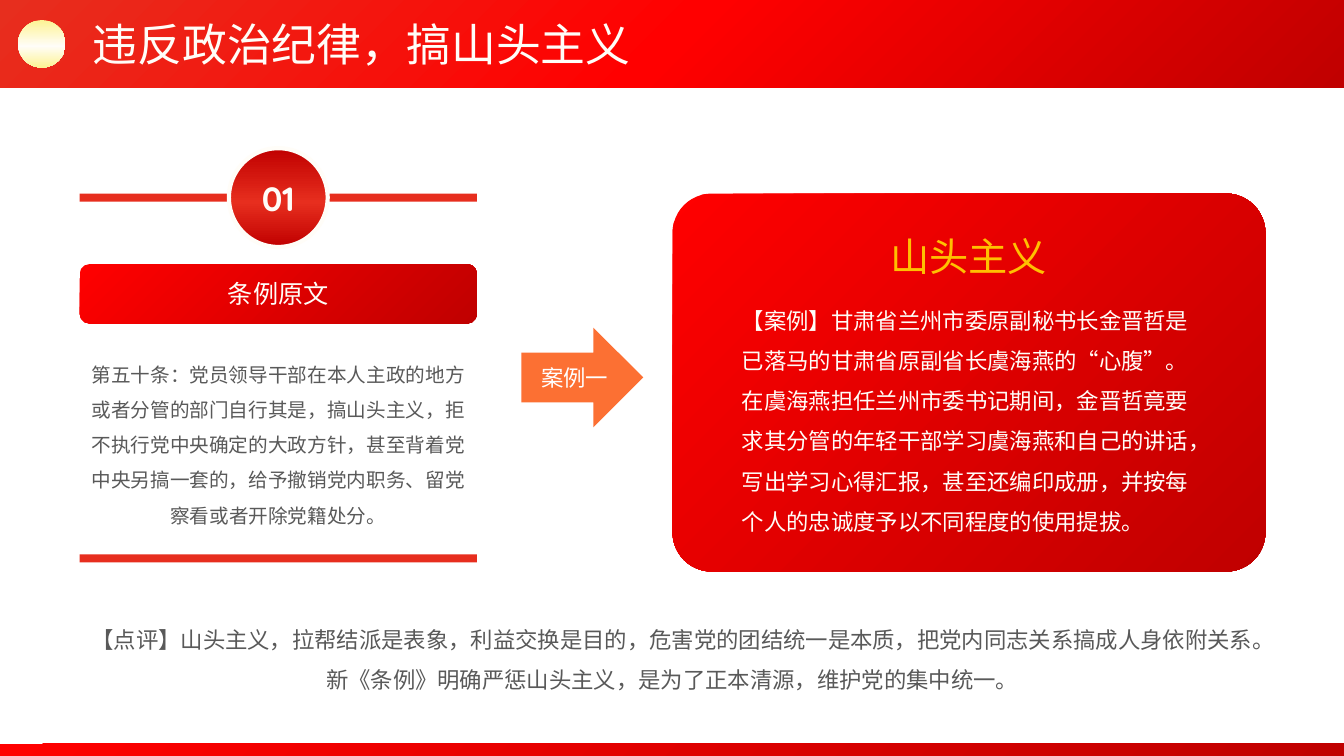
"""Build the slide on factional conduct: rule, case and comment."""
from copy import deepcopy
from pptx import Presentation
from pptx.dml.color import RGBColor
from pptx.enum.shapes import MSO_SHAPE
from pptx.enum.text import MSO_ANCHOR, MSO_AUTO_SIZE, PP_ALIGN
from pptx.oxml.ns import qn
from pptx.util import Inches, Pt

RECT, ROUND, OVAL = MSO_SHAPE.RECTANGLE, MSO_SHAPE.ROUNDED_RECTANGLE, MSO_SHAPE.OVAL
ARROW = MSO_SHAPE.RIGHT_ARROW
LEFT, MID, RIGHT = PP_ALIGN.LEFT, PP_ALIGN.CENTER, PP_ALIGN.RIGHT
CENTER, TOP = MSO_ANCHOR.MIDDLE, MSO_ANCHOR.TOP
GROW, FIXED = MSO_AUTO_SIZE.SHAPE_TO_FIT_TEXT, MSO_AUTO_SIZE.NONE

THEME = {
    "red": "E72E1E", "orange": "FC7033", "cream": "FFFDF8", "white": "FFFFFF",
    "gray": "595959", "gold": "FFC000",
    "deep": (45, (0, "FF0000"), (1, "C00000")),
    "head": (45, (0, "E72E1E"), (0.5, "FF0000"), (1, "C00000")),
    "disc": (90, (0, "C00000"), (0.55, "E72E1E"), (1, "C00000")),
    "glow": (90, (0, "FDF394"), (0.55, "FFFDF8"), (1, "FDF394")),
    "han": "Noto Sans CJK SC", "num": "Quicksand",
    "title": 32, "name": 28, "mark": 24, "label": 18, "body": 16, "rule": 14,
}

WIDE, HIGH = 13.33, 7.5
EDGE, COL, END = 0.79, 3.94, 12.55
BAR, DISC, LINE = 0.08, 0.98, 1.92
CARD = 6.67

deck = Presentation()
deck.slide_width, deck.slide_height = Inches(WIDE), Inches(HIGH)
slide = deck.slides.add_slide(deck.slide_layouts[6])


def draw(kind, *at, fill=None):
    """Add a shape, or a text box when kind is None."""
    at = [Inches(n) for n in at]
    if kind is None:
        return slide.shapes.add_textbox(*at)
    shape = slide.shapes.add_shape(kind, *at)
    shape.shadow.inherit = False
    shape.line.fill.background()
    paint = THEME[fill]
    if isinstance(paint, str):
        shape.fill.solid()
        shape.fill.fore_color.rgb = RGBColor.from_string(paint)
        return shape
    angle, *stops = paint
    shape.fill.gradient()
    shape.fill.gradient_angle = 360 - angle
    ramp = next(shape._element.spPr.iter(qn("a:gsLst")))
    for _ in stops[2:]:
        ramp.append(deepcopy(ramp[-1]))
    for stop, (spot, tone) in zip(shape.fill.gradient_stops, stops):
        stop.position = spot
        stop.color.rgb = RGBColor.from_string(tone)
    return shape


def write(shape, text, size="body", color="cream", face="han", align=MID,
          anchor=CENTER, space=None, bold=False, wrap=True, fit=FIXED):
    """Put one formatted paragraph into a shape."""
    frame = shape.text_frame
    frame.word_wrap, frame.auto_size = wrap, fit
    frame.vertical_anchor = anchor
    para = frame.paragraphs[0]
    para.alignment, para.line_spacing = align, space
    run = para.add_run()
    run.text = text
    font = run.font
    font.size, font.bold, font.name = Pt(THEME[size]), bold, THEME[face]
    font.color.rgb = RGBColor.from_string(THEME[color])
    east = deepcopy(font._element.find(qn("a:latin")))
    east.tag = qn("a:ea")
    east.set("typeface", THEME["han"])
    font._element.append(east)


draw(RECT, 0, HIGH - 0.12, WIDE, 0.12, fill="deep")
draw(RECT, 0, 0, WIDE, 0.87, fill="head")
draw(OVAL, 0.18, 0.2, 0.47, 0.47, fill="glow")
write(draw(None, 0.82, 0.12, 5.59, 0.64), "违反政治纪律，搞山头主义",
      size="title", align=LEFT, anchor=TOP, wrap=False, fit=GROW)

for top in (LINE, 5.5):
    draw(RECT, EDGE, top, COL, BAR, fill="red")
disc = draw(OVAL, EDGE + (COL - DISC) / 2, LINE + (BAR - DISC) / 2, DISC, DISC, fill="disc")
disc.line.color.rgb = RGBColor.from_string(THEME["cream"])
disc.line.width = Pt(3)
write(disc, "01", size="mark", face="num", bold=True)
write(draw(ROUND, EDGE, 2.62, COL, 0.59, fill="deep"), "条例原文", size="label")
write(draw(None, EDGE, 3.43, COL, 1.83),
      "第五十条：党员领导干部在本人主政的地方或者分管的部门自行其是，搞山头主义，"
      "拒不执行党中央确定的大政方针，甚至背着党中央另搞一套的，给予撤销党内职务、"
      "留党察看或者开除党籍处分。",
      size="rule", color="gray", anchor=TOP, space=1.5, fit=GROW)

write(draw(ARROW, 5.17, 3.25, 1.21, 0.99, fill="orange"), "案例一",
      color="white", face="num", align=RIGHT)

card = draw(ROUND, CARD, LINE, END - CARD, 3.75, fill="deep")
card.adjustments[0] = 0.104
write(draw(None, 8.72, 2.26, 1.77, 0.57), "山头主义",
      size="name", color="gold", anchor=TOP, wrap=False, fit=GROW)
write(draw(None, 7.26, 2.86, 4.69, 2.48),
      "【案例】甘肃省兰州市委原副秘书长金晋哲是已落马的甘肃省原副省长虞海燕的“心腹”。"
      "在虞海燕担任兰州市委书记期间，金晋哲竟要求其分管的年轻干部学习虞海燕和自己的讲话，"
      "写出学习心得汇报，甚至还编印成册，并按每个人的忠诚度予以不同程度的使用提拔。",
      align=LEFT, anchor=TOP, space=1.5, fit=GROW)

write(draw(None, EDGE, 6.03, END - EDGE, 0.87),
      "【点评】山头主义，拉帮结派是表象，利益交换是目的，危害党的团结统一是本质，"
      "把党内同志关系搞成人身依附关系。新《条例》明确严惩山头主义，是为了正本清源，"
      "维护党的集中统一。",
      color="gray", anchor=TOP, space=1.5, fit=GROW)

deck.save("out.pptx")
